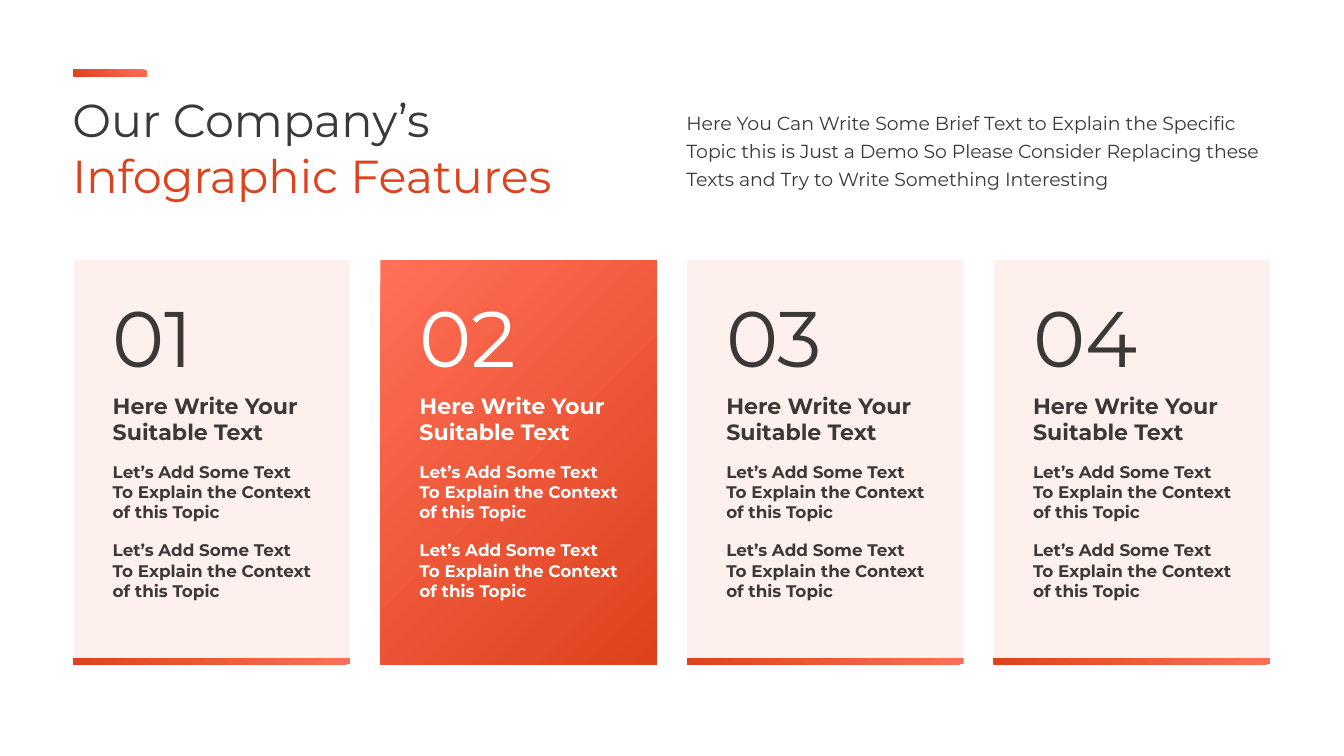
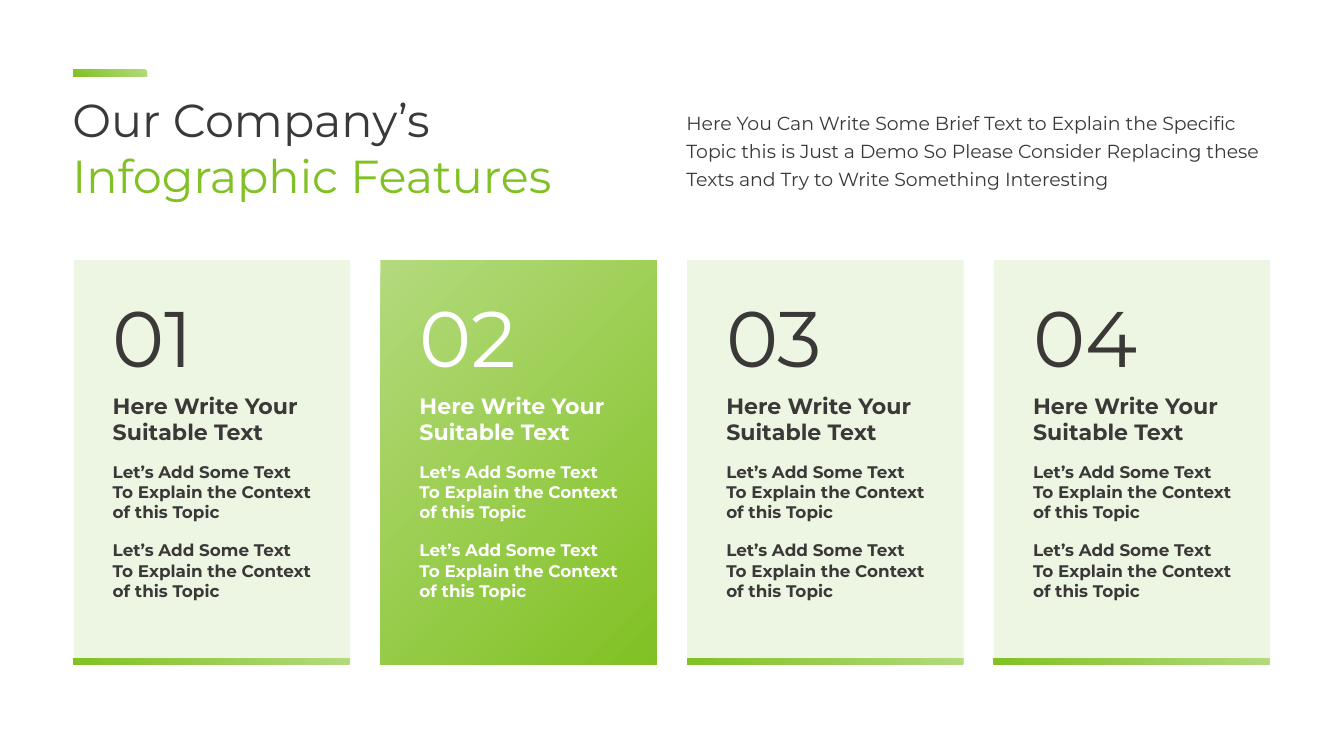
from dataclasses import dataclass

from lxml import etree
from pptx import Presentation
from pptx.dml.color import RGBColor
from pptx.enum import shapes
from pptx.oxml import ns
from pptx.util import Inches, Pt


@dataclass(frozen=True)
class Theme:
    accent: tuple   # gradient stops: (position, colour)
    panel: tuple
    ink: str = "3B3838"
    white: str = "FFFFFF"
    font: str = "Montserrat"
    title_size: float = 33
    intro_size: float = 13.5
    number_size: float = 56.2
    heading_size: float = 15.8
    detail_size: float = 12

    @property
    def highlight(self):
        return self.accent[0][1]


THEMES = (
    Theme(accent=((0, "DD421D"), (1, "FF6F57")),
          panel=((0.12, "FFEDEB"), (1, "FDF0ED"))),
    Theme(accent=((0, "81C123"), (1, "B3DA7D")),
          panel=((0, "EBF5DF"), (1, "ECF6E2"))),
)

TITLE = ("Our Company’s", "Infographic Features")
INTRO = ("Here You Can Write Some Brief Text to Explain the Specific Topic "
         "this is Just a Demo So Please Consider Replacing these Texts "
         "and Try to Write Something Interesting")
HEADING = ("Here Write Your", "Suitable Text")
DETAIL = ("Let’s Add Some Text", "To Explain the Context", "of this Topic")

LEFT, RIGHT = 0.73, 12.6
CARD_TOP, CARD_HEIGHT, CARD_GAP = 2.58, 4.01, 0.3
CARD_COUNT, FEATURED = 4, 2
CARD_WIDTH = (RIGHT - LEFT - CARD_GAP * (CARD_COUNT - 1)) / CARD_COUNT
STRIPE = 0.06


def add_gradient_box(slide, box, stops, from_right=False):
    """Rectangle whose gradient spreads from a bottom corner."""
    panel = slide.shapes.add_shape(shapes.MSO_SHAPE.RECTANGLE,
                                   *map(Inches, box))
    panel.shadow.inherit = False
    panel.line.fill.background()
    panel.fill.gradient()
    for stop, (position, color) in zip(panel.fill.gradient_stops, stops):
        stop.position = position
        stop.color.rgb = RGBColor.from_string(color)
    # Swap the linear direction for a circular one
    gradient = panel.fill._fill._gradFill
    gradient.remove(gradient.find(ns.qn("a:lin")))
    circle = etree.SubElement(gradient, ns.qn("a:path"))
    circle.set("path", "circle")
    focus = etree.SubElement(circle, ns.qn("a:fillToRect"))
    focus.set("t", "100000")
    focus.set("l" if from_right else "r", "100000")


def add_text(slide, theme, box, lines, size, color, bold=False):
    frame = slide.shapes.add_textbox(*map(Inches, box)).text_frame
    frame.word_wrap = True
    frame.text = "\n".join(lines)
    for paragraph in frame.paragraphs:
        for run in paragraph.runs:
            run.font.name = theme.font
            run.font.size = Pt(size)
            run.font.bold = bold
            run.font.color.rgb = RGBColor.from_string(color)
    return frame


def add_header(slide, theme, left, top):
    # Accent bar and two-tone title
    add_gradient_box(slide, (left, top, 0.73, 0.07), theme.accent)
    title = add_text(slide, theme, (left - 0.11, top + 0.17, 5.37, 1.21),
                     TITLE, theme.title_size, theme.ink)
    company_feature = title.paragraphs[1].runs[0]
    company_feature.font.color.rgb = RGBColor.from_string(theme.highlight)
    # Introduction
    intro = add_text(slide, theme, (left + 5.98, top + 0.31, 6.12, 0.92),
                     (INTRO,), theme.intro_size, theme.ink)
    intro.paragraphs[0].line_spacing = Pt(20)


def add_card(slide, theme, box, number):
    left, top, width, height = box
    featured = number == FEATURED
    color = theme.white if featured else theme.ink
    # Panel, with a stripe at its foot unless featured
    if featured:
        add_gradient_box(slide, box, theme.accent, from_right=True)
    else:
        add_gradient_box(slide, box, theme.panel)
        add_gradient_box(slide, (left, top + height - STRIPE, width, STRIPE),
                         theme.accent)
    # Number, heading and two details
    blocks = (
        (0.24, 1.05, (f"{number:02}",), theme.number_size, False),
        (1.26, 0.63, HEADING, theme.heading_size, True),
        (1.95, 0.71, DETAIL, theme.detail_size, True),
        (2.73, 0.71, DETAIL, theme.detail_size, True),
    )
    for offset, block_height, lines, size, bold in blocks:
        add_text(slide, theme, (left + 0.29, top + offset, 2.4, block_height),
                 lines, size, color, bold)


def add_feature_slide(deck, theme):
    slide = deck.slides.add_slide(deck.slide_layouts[6])
    add_header(slide, theme, LEFT, 0.69)
    for index in range(CARD_COUNT):
        left = LEFT + index * (CARD_WIDTH + CARD_GAP)
        add_card(slide, theme, (left, CARD_TOP, CARD_WIDTH, CARD_HEIGHT),
                 index + 1)


def main():
    deck = Presentation()
    deck.slide_width, deck.slide_height = Inches(13.33), Inches(7.5)
    for theme in THEMES:
        add_feature_slide(deck, theme)
    deck.save("out.pptx")


if __name__ == "__main__":
    main()
